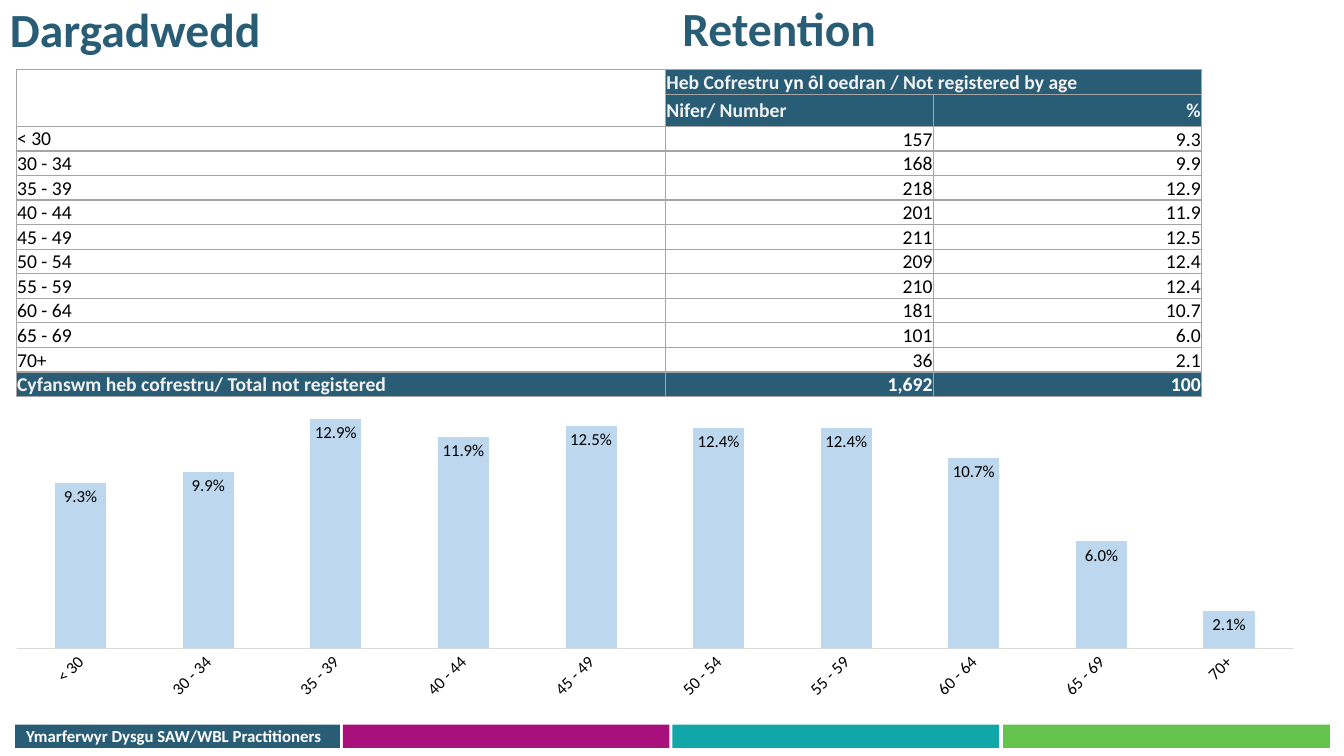
from lxml.etree import SubElement
from pptx import Presentation
from pptx.chart.data import CategoryChartData
from pptx.dml.color import RGBColor
from pptx.enum.chart import XL_CHART_TYPE, XL_LABEL_POSITION, XL_TICK_MARK
from pptx.enum.shapes import MSO_SHAPE
from pptx.enum.text import MSO_ANCHOR, PP_ALIGN
from pptx.oxml import parse_xml
from pptx.oxml.ns import nsdecls, qn
from pptx.util import Inches, Pt

NAVY = RGBColor(0x29, 0x5D, 0x75)
MAGENTA = RGBColor(0xA8, 0x11, 0x7C)
TEAL = RGBColor(0x11, 0xA6, 0xA8)
GREEN = RGBColor(0x65, 0xC2, 0x4C)
PALE_BLUE = RGBColor(0xBD, 0xD7, 0xEE)
OFF_WHITE = RGBColor(0xF2, 0xF2, 0xF2)
WHITE = RGBColor(0xFF, 0xFF, 0xFF)
BLACK = RGBColor(0, 0, 0)
BORDER_GREY = RGBColor(0xA5, 0xA5, 0xA5)
AXIS_GREY = RGBColor(0xD9, 0xD9, 0xD9)
FONT = "Calibri"

AGE_BANDS = [
    ("< 30", 157, 9.3), ("30 - 34", 168, 9.9), ("35 - 39", 218, 12.9),
    ("40 - 44", 201, 11.9), ("45 - 49", 211, 12.5), ("50 - 54", 209, 12.4),
    ("55 - 59", 210, 12.4), ("60 - 64", 181, 10.7), ("65 - 69", 101, 6.0),
    ("70+", 36, 2.1),
]


def style_font(font, size, color, bold=False):
    """Apply the slide typeface with a size, colour and weight."""
    font.name = FONT
    font.size = Pt(size)
    font.bold = bold
    font.color.rgb = color


def add_run(paragraph, text, size, color, bold=False):
    """Append one styled run to a paragraph."""
    run = paragraph.add_run()
    run.text = text
    style_font(run.font, size, color, bold)


def add_label(slide, text, left, top, width, height, size, color):
    """Add a bold single-line text box."""
    frame = slide.shapes.add_textbox(
        Inches(left), Inches(top), Inches(width), Inches(height)).text_frame
    frame.word_wrap = True
    frame.paragraphs[0].line_spacing = 0.9
    add_run(frame.paragraphs[0], text, size, color, True)


def add_band(slide, left, width, color):
    """Add one coloured block of the footer strip."""
    band = slide.shapes.add_shape(
        MSO_SHAPE.RECTANGLE, Inches(left), Inches(7.19), Inches(width), Inches(0.23))
    band.shadow.inherit = False
    band.fill.solid()
    band.fill.fore_color.rgb = color
    band.line.fill.background()


def format_cell(cell, fill):
    """Set a cell's margins, fill and grey borders."""
    cell.margin_left = cell.margin_right = cell.margin_top = Inches(0.01)
    cell.margin_bottom = 0
    cell.vertical_anchor = MSO_ANCHOR.MIDDLE
    if fill:
        cell.fill.solid()
        cell.fill.fore_color.rgb = fill
    else:
        cell.fill.background()
    properties = cell._tc.get_or_add_tcPr()
    for position, side in enumerate(("lnL", "lnR", "lnT", "lnB")):
        properties.insert(position, parse_xml(
            f'<a:{side} {nsdecls("a")} w="12700"><a:solidFill>'
            f'<a:srgbClr val="{BORDER_GREY}"/></a:solidFill></a:{side}>'))


def fill_row(table, row, entries, colors, bold):
    """Write one table row, with every column but the first right-aligned."""
    for column, (entry, color) in enumerate(zip(entries, colors)):
        if entry:
            paragraph = table.cell(row, column).text_frame.paragraphs[0]
            if column:
                paragraph.alignment = PP_ALIGN.RIGHT
            add_run(paragraph, entry, 14, color, bold)


def add_age_table(slide):
    """Add the table of unregistered practitioners by age."""
    total_row = len(AGE_BANDS) + 2
    table = slide.shapes.add_table(
        total_row + 1, 3, Inches(0.16), Inches(0.69), Inches(11.76), Inches(3.2)).table
    table.first_row = table.horz_banding = False
    for column, width in zip(table.columns, (6.44, 2.66, 2.66)):
        column.width = Inches(width)
    for index, row in enumerate(table.rows):
        row.height = Inches(0.32 if index == 1 else 0.24)
        for column, cell in enumerate(row.cells):
            dark = index == total_row or (index < 2 and column > 0)
            format_cell(cell, NAVY if dark else None)
    table.cell(0, 0).merge(table.cell(1, 0))
    table.cell(0, 1).merge(table.cell(0, 2))

    heading = table.cell(0, 1).text_frame.paragraphs[0]
    for text, color in (("Heb Cofrestru ", OFF_WHITE), ("yn ôl ", WHITE),
                        ("oedran / Not registered by age", OFF_WHITE)):
        add_run(heading, text, 14, color, True)
    fill_row(table, 1, ("", "Nifer/ Number", "%"), [OFF_WHITE] * 3, True)
    table.cell(1, 1).text_frame.paragraphs[0].alignment = PP_ALIGN.LEFT
    for row, (age, number, percent) in enumerate(AGE_BANDS, 2):
        fill_row(table, row, (age, str(number), f"{percent:.1f}"), [BLACK] * 3, False)
        table.cell(row, 0).vertical_anchor = MSO_ANCHOR.BOTTOM
    fill_row(table, total_row,
             ("Cyfanswm heb cofrestru/ Total not registered", "1,692", "100"),
             (OFF_WHITE, WHITE, WHITE), True)


def place_plot(chart, x, y, width, height):
    """Fix the inner plot area as fractions of the chart."""
    plot_area = chart._chartSpace.chart.plotArea
    for automatic in plot_area.findall(qn("c:layout")):
        plot_area.remove(automatic)
    layout = parse_xml(f'<c:layout {nsdecls("c")}><c:manualLayout/></c:layout>')
    settings = (("layoutTarget", "inner"), ("xMode", "edge"), ("yMode", "edge"),
                ("x", x), ("y", y), ("w", width), ("h", height))
    for tag, setting in settings:
        SubElement(layout[0], qn(f"c:{tag}")).set("val", str(setting))
    plot_area.insert(0, layout)


def add_age_chart(slide):
    """Add the column chart of percentages by age."""
    data = CategoryChartData(number_format="0.0%")
    data.categories = [age for age, _, _ in AGE_BANDS]
    data.add_series("Series 1", [round(percent / 100, 3) for _, _, percent in AGE_BANDS])
    chart = slide.shapes.add_chart(
        XL_CHART_TYPE.COLUMN_STACKED, Inches(-0.18), Inches(3.88),
        Inches(13.35), Inches(3.29), data).chart
    style_font(chart.font, 10, BLACK)
    chart.has_legend = chart.has_title = False
    place_plot(chart, 0.026, 0.025, 0.948, 0.75)

    ages = chart.category_axis
    ages.major_tick_mark = ages.minor_tick_mark = XL_TICK_MARK.NONE
    ages.format.line.color.rgb = AXIS_GREY
    ages.format.line.width = Pt(0.75)
    style_font(ages.tick_labels.font, 12, BLACK)
    ages._element.find(qn("c:txPr")).find(qn("a:bodyPr")).set("rot", "-2700000")

    percentages = chart.value_axis
    percentages.minimum_scale = 0
    percentages.maximum_scale = 0.14
    percentages.has_major_gridlines = False
    percentages.visible = False

    columns = chart.plots[0]
    columns.gap_width = 150
    columns.overlap = 100
    columns.vary_by_categories = False
    share = columns.series[0]
    share.format.fill.solid()
    share.format.fill.fore_color.rgb = PALE_BLUE
    labels = share.data_labels
    labels.show_value = True
    labels.number_format = "0.0%"
    labels.number_format_is_linked = False
    labels.position = XL_LABEL_POSITION.INSIDE_END
    style_font(labels.font, 12, BLACK)


def main():
    """Build the retention slide and save it."""
    presentation = Presentation()
    presentation.slide_width = Inches(13.33)
    presentation.slide_height = Inches(7.5)
    slide = presentation.slides.add_slide(presentation.slide_layouts[6])
    for left, width, color in ((3.4, 3.24, MAGENTA), (6.67, 3.24, TEAL),
                               (9.95, 3.24, GREEN), (0.15, 3.22, NAVY)):
        add_band(slide, left, width, color)
    add_label(slide, "Dargadwedd", 0, 0.01, 5.22, 0.51, 34, NAVY)
    add_label(slide, "Retention", 6.67, 0, 5.52, 0.51, 34, NAVY)
    add_age_table(slide)
    add_age_chart(slide)
    add_label(slide, "Ymarferwyr Dysgu SAW/WBL Practitioners",
              0.16, 7.17, 3.34, 0.35, 12, WHITE)
    presentation.save("out.pptx")


if __name__ == "__main__":
    main()
